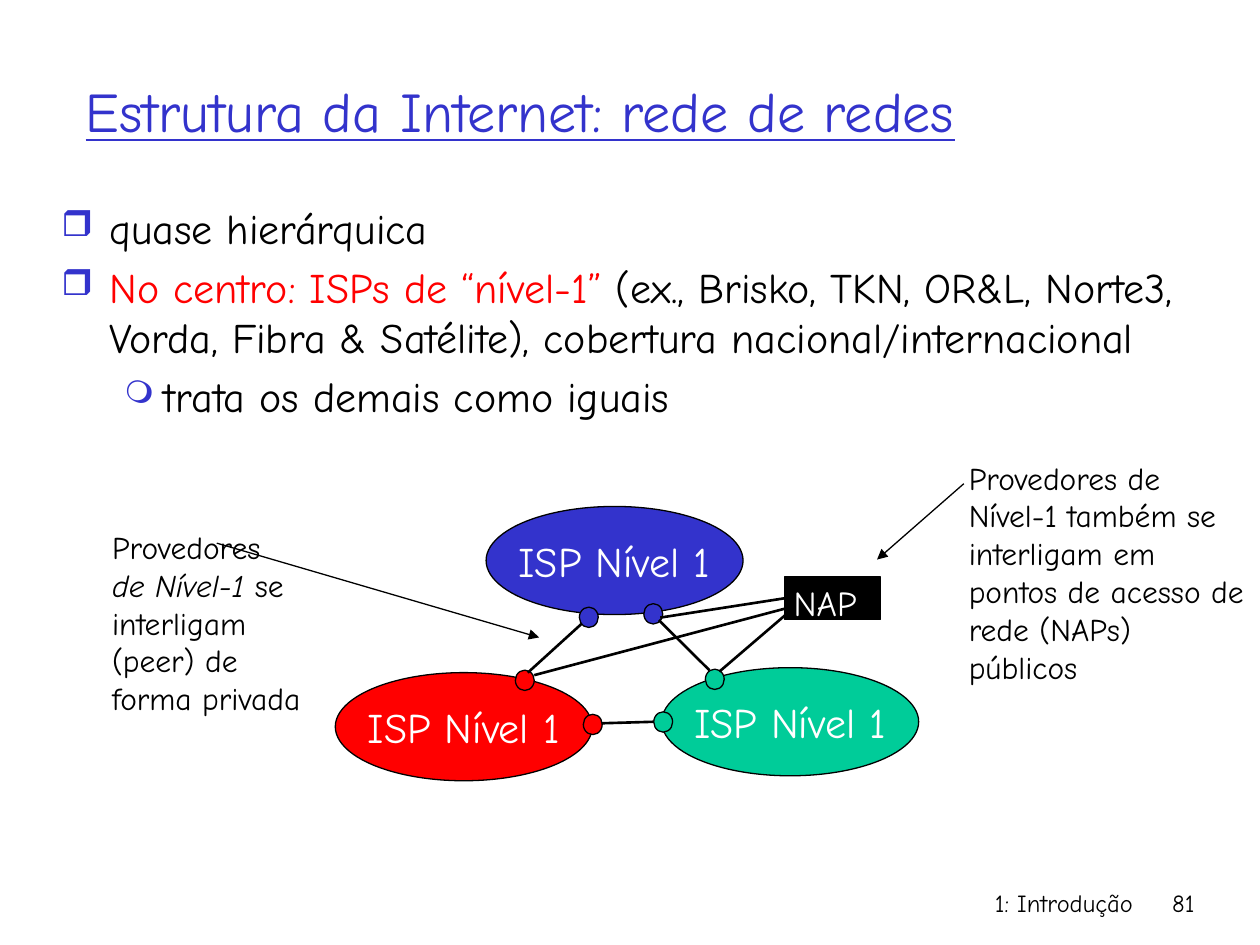
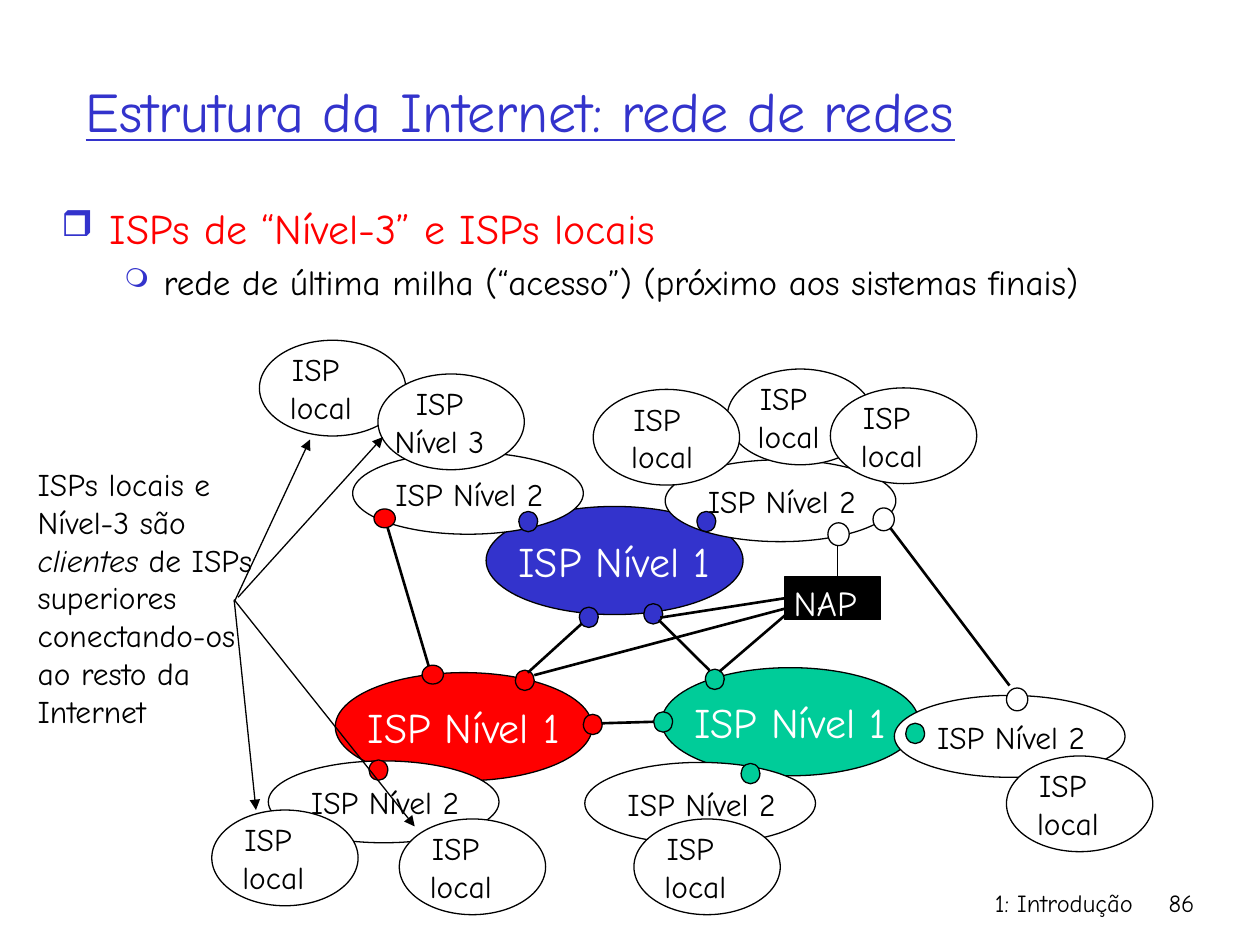
from lxml import etree
from pptx import Presentation
from pptx.dml.color import RGBColor
from pptx.enum.shapes import MSO_CONNECTOR as Connector, MSO_SHAPE as Shape
from pptx.enum.text import MSO_ANCHOR as Anchor, MSO_AUTO_SIZE as AutoSize, PP_ALIGN as Align
from pptx.oxml.ns import qn
from pptx.util import Cm, Pt

FONT = "Comic Neue"
BLACK, WHITE, RED, BLUE, GREEN = "000000", "FFFFFF", "FF0000", "3333CC", "00CC99"
TITLE = "Estrutura da Internet: rede de redes"
FOOTER = "1: Introdução"

BULLETS = [
    dict(char="❒", percent=85, left=0.97, hanging=0.97),
    dict(char="❍", percent=75, left=2.06, hanging=0.79),
]

HIERARCHY = [
    (0, 24, [("quase hierárquica", BLACK)]),
    (0, 24, [
        ("No centro: ISPs de “nível-1” ", RED),
        ("(ex., Brisko, TKN, OR&L, Norte3, Vorda, Fibra & Satélite), "
         "cobertura nacional/internacional", BLACK),
    ]),
    (1, 24, [("trata os demais como iguais", BLACK)]),
]
LAST_MILE = [
    (0, 24, [("ISPs de “Nível-3” e ISPs locais", RED)]),
    (1, 20, [("rede de última milha (“acesso”) (próximo aos sistemas finais)", BLACK)]),
]

TIER1_SIZE, TIER2_SIZE, LOCAL_SIZE = (5.18, 2.18), (4.65, 1.65), (2.95, 1.93)
PEER_SIZE, CLIENT_SIZE, ACCESS_SIZE = (0.38, 0.41), (0.43, 0.38), (0.43, 0.46)

TIER1 = [(6.76, 13.56, RED), (9.8, 10.21, BLUE), (13.34, 13.46, GREEN)]
TIER1_PEERS = [
    (14.22, 13.49, GREEN), (12.98, 12.17, BLUE), (11.68, 12.24, BLUE),
    (10.39, 13.51, RED), (11.76, 14.4, RED), (13.18, 14.35, GREEN),
]
TIER1_LINKS = [
    (12.14, 14.58, 13.18, 14.55), (13.28, 12.5, 14.3, 13.51),
    (10.64, 13.56, 11.73, 12.57),
]
NAP = (15.82, 11.63, 1.93, 0.86)
NAP_MIDDLE_LINK = (15.82, 12.06, 13.31, 12.45)
NAP_LINKS = [(15.9, 12.34, 14.5, 13.54), (15.82, 12.27, 10.77, 13.61)]

PRIVATE_NOTE = ((2.01, 10.52, 4.34, 4.83), [
    [("Provedores", False)],
    [("de Nível-1", True), (" se interligam (peer) de forma privada", False)],
])
PUBLIC_NOTE = ((19.28, 9.12, 6.12, 4.83), [
    [("Provedores de Nível-1 também se interligam em pontos de acesso "
      "de rede (NAPs) públicos", False)],
])
CLIENT_NOTE = ((0.51, 9.25, 5, 7.11), [
    [("ISPs locais e Nível-3 são ", False), ("clientes", True),
     (" de ISPs superiores conectando-os ao resto da Internet", False)],
])
PEERING_ARROWS = [(4.37, 10.95, 10.87, 12.85), (19.43, 9.75, 17.68, 11.28)]
CLIENT_ARROWS = [
    (4.72, 12.14, 6.25, 8.86), (4.8, 12.04, 7.72, 8.81),
    (4.72, 12.09, 5.16, 16.33), (4.72, 12.09, 8.36, 16.66),
]

TIER2 = [
    ((13.41, 9.27), (14.05, 10.31, BLUE)),
    ((7.11, 9.12), (10.46, 10.31, BLUE)),
    ((5.41, 15.34), (7.44, 15.32, RED)),
    ((11.79, 15.37), (14.94, 15.39, GREEN)),
    ((18.03, 14.02), (18.26, 14.58, GREEN)),
]
TIER2_LINKS = [(7.8, 10.59, 8.69, 13.59), (17.93, 10.62, 20.35, 13.82)]
TIER2_NAP_LINK = (16.89, 10.97, 16.89, 11.63)
CLIENT_POINTS = [(7.54, 10.26), (8.51, 13.41)]
ACCESS_POINTS = [(17.6, 10.24), (20.29, 13.87), (16.69, 10.54)]

LOCAL, TIER3 = ("ISP \nlocal", 1.85), ("ISP\nNível 3", 2.59)
LOCAL_CENTRE = 1.24
CUSTOMERS = [
    (14.66, 7.44, LOCAL, 0), (11.96, 7.85, LOCAL, 0.15), (16.74, 7.82, LOCAL, 0),
    (4.27, 16.33, LOCAL, 0), (5.23, 6.86, LOCAL, 0), (7.62, 7.54, TIER3, 0),
    (8.05, 16.51, LOCAL, 0), (12.78, 16.51, LOCAL, 0), (20.29, 15.24, LOCAL, 0),
]


def color(value):
    return RGBColor.from_string(value)


def style(font, size, ink=BLACK, italic=None):
    font.name, font.size, font.italic = FONT, Pt(size), italic
    font.color.rgb = color(ink)


def write(text_frame, text, size, ink=BLACK, align=Align.LEFT):
    text_frame.text = text
    for paragraph in text_frame.paragraphs:
        paragraph.alignment = align
        for run in paragraph.runs:
            style(run.font, size, ink)


def add_box(slide, box, wrap=True):
    text_frame = slide.shapes.add_textbox(*map(Cm, box)).text_frame
    text_frame.word_wrap = wrap
    return text_frame


def add_shape(slide, kind, box, fill):
    shape = slide.shapes.add_shape(kind, *map(Cm, box))
    shape.shadow.inherit = False
    shape.fill.solid()
    shape.fill.fore_color.rgb = color(fill)
    shape.line.color.rgb = color(BLACK)
    shape.line.width = Pt(0.75)
    return shape


def add_ellipse(slide, left, top, size, fill):
    return add_shape(slide, Shape.OVAL, (left, top, *size), fill)


def add_line(slide, ends, width=1.5, arrow=False):
    line = slide.shapes.add_connector(Connector.STRAIGHT, *map(Cm, ends))
    line.line.color.rgb = color(BLACK)
    line.line.width = Pt(width)
    if arrow:
        etree.SubElement(line.line._get_or_add_ln(), qn("a:tailEnd"), type="triangle")
    etree.SubElement(line._element.spPr, qn("a:effectLst"))
    return line


def add_bullet(paragraph, char, percent, left, hanging):
    properties = paragraph._p.get_or_add_pPr()
    properties.set("marL", str(Cm(left)))
    properties.set("indent", str(-Cm(hanging)))
    bullet_color = etree.SubElement(properties, qn("a:buClr"))
    etree.SubElement(bullet_color, qn("a:srgbClr"), val=BLUE)
    etree.SubElement(properties, qn("a:buSzPct"), val=str(percent * 1000))
    etree.SubElement(properties, qn("a:buChar"), char=char)


def add_body(slide, height, items):
    text_frame = add_box(slide, (0.99, 3.96, 23.44, height))
    for index, (level, size, runs) in enumerate(items):
        paragraph = text_frame.add_paragraph() if index else text_frame.paragraphs[0]
        paragraph.level = level
        paragraph.space_before = Pt(size * 0.2)
        add_bullet(paragraph, **BULLETS[level])
        for text, ink in runs:
            run = paragraph.add_run()
            run.text = text
            style(run.font, size, ink)


def add_note(slide, box, paragraphs):
    text_frame = add_box(slide, box)
    for index, runs in enumerate(paragraphs):
        paragraph = text_frame.add_paragraph() if index else text_frame.paragraphs[0]
        for text, italic in runs:
            run = paragraph.add_run()
            run.text = text
            style(run.font, 18, italic=italic)


def add_arrows(slide, arrows):
    for ends in arrows:
        add_line(slide, ends, 0.75, arrow=True)


def add_base(presentation, number):
    slide = presentation.slides.add_slide(presentation.slide_layouts[5])
    title = slide.shapes.title
    title.left, title.top, title.width, title.height = map(Cm, (1.47, 0.64, 21.59, 3.18))
    write(title.text_frame, TITLE, 32, BLUE)
    title.text_frame.paragraphs[0].runs[0].font.underline = True
    title.text_frame.vertical_anchor = Anchor.MIDDLE
    title.text_frame.auto_size = AutoSize.NONE
    write(add_box(slide, (15.04, 17.78, 8.05, 1.27)), FOOTER, 14, align=Align.RIGHT)
    write(add_box(slide, (23.06, 17.78, 1.27, 1.27)), str(number), 14, align=Align.RIGHT)
    return slide


def add_backbone(slide):
    for left, top, fill in TIER1:
        provider = add_ellipse(slide, left, top, TIER1_SIZE, fill)
        write(provider.text_frame, "ISP Nível 1", 24, WHITE, Align.CENTER)
        provider.text_frame.vertical_anchor = Anchor.MIDDLE
        provider.text_frame.word_wrap = False
    for left, top, fill in TIER1_PEERS:
        add_ellipse(slide, left, top, PEER_SIZE, fill)
    for ends in TIER1_LINKS:
        add_line(slide, ends)

    nap = add_shape(slide, Shape.RECTANGLE, NAP, BLACK)
    write(nap.text_frame, "NAP", 20, WHITE)
    nap.text_frame.vertical_anchor = Anchor.TOP
    nap.text_frame.margin_left = Cm(0.18)
    nap.text_frame.margin_top = Cm(0.1)
    add_line(slide, NAP_MIDDLE_LINK).begin_connect(nap, 1)
    for ends in NAP_LINKS:
        add_line(slide, ends)


def add_tier2(slide):
    for (left, top), peer in TIER2:
        add_ellipse(slide, left, top, TIER2_SIZE, WHITE)
        label = add_box(slide, (left + 0.61, top + 0.33, 3.91, 1.02), wrap=False)
        write(label, "ISP Nível 2", 18)
        peer_left, peer_top, fill = peer
        add_ellipse(slide, peer_left, peer_top, PEER_SIZE, fill)
    for ends in TIER2_LINKS:
        add_line(slide, ends)
    add_line(slide, TIER2_NAP_LINK, 0.75)
    for left, top in CLIENT_POINTS:
        add_ellipse(slide, left, top, CLIENT_SIZE, RED)
    for left, top in ACCESS_POINTS:
        add_ellipse(slide, left, top, ACCESS_SIZE, WHITE)


def add_customers(slide):
    for left, top, (text, width), shift in CUSTOMERS:
        add_ellipse(slide, left, top, LOCAL_SIZE, WHITE)
        label_left = left + LOCAL_CENTRE + shift - width / 2
        label = add_box(slide, (label_left, top + 0.08, width, 1.78), wrap=False)
        write(label, text, 18, align=Align.CENTER)


def main():
    presentation = Presentation()
    presentation.slide_width, presentation.slide_height = Cm(25.4), Cm(19.05)

    slide = add_base(presentation, 81)
    add_body(slide, 12.9, HIERARCHY)
    add_backbone(slide)
    add_note(slide, *PRIVATE_NOTE)
    add_note(slide, *PUBLIC_NOTE)
    add_arrows(slide, PEERING_ARROWS)

    slide = add_base(presentation, 86)
    add_body(slide, 2.54, LAST_MILE)
    add_backbone(slide)
    add_tier2(slide)
    add_customers(slide)
    add_note(slide, *CLIENT_NOTE)
    add_arrows(slide, CLIENT_ARROWS)

    presentation.save("out.pptx")


if __name__ == "__main__":
    main()
